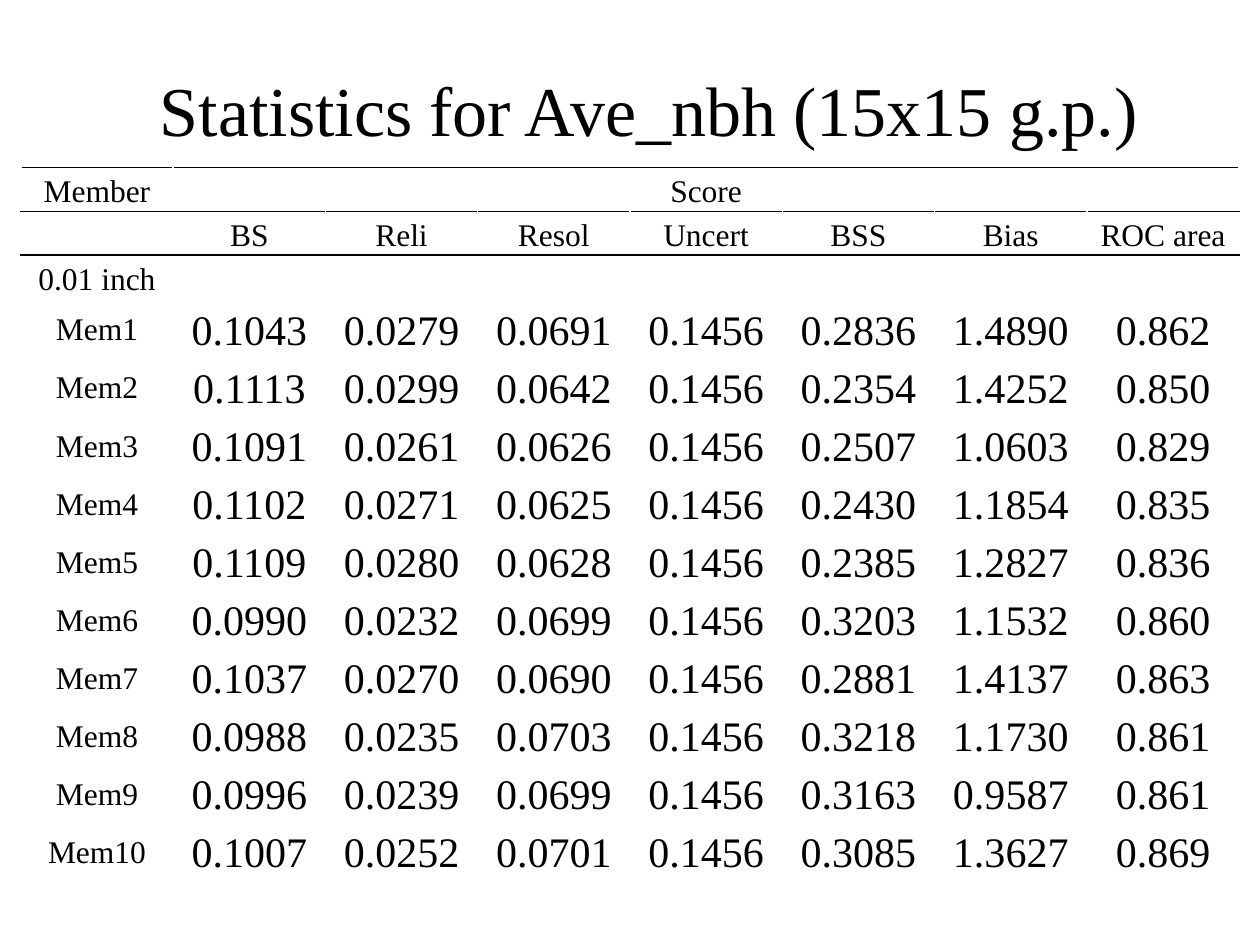
from dataclasses import dataclass

from lxml.etree import SubElement
from pptx import Presentation
from pptx.dml.color import RGBColor
from pptx.enum.text import MSO_ANCHOR, MSO_AUTO_SIZE, PP_ALIGN
from pptx.oxml.ns import qn
from pptx.util import Cm, Pt


@dataclass(frozen=True)
class Theme:
    font: str = "Times New Roman"
    ink: str = "000000"
    title_size: int = 40
    label_size: int = 18
    value_size: int = 24
    rule_width: int = 1


HEADINGS = ["", "BS", "Reli", "Resol", "Uncert", "BSS", "Bias", "ROC area"]
SCORES = """
0.1043 0.0279 0.0691 0.1456 0.2836 1.4890 0.862
0.1113 0.0299 0.0642 0.1456 0.2354 1.4252 0.850
0.1091 0.0261 0.0626 0.1456 0.2507 1.0603 0.829
0.1102 0.0271 0.0625 0.1456 0.2430 1.1854 0.835
0.1109 0.0280 0.0628 0.1456 0.2385 1.2827 0.836
0.0990 0.0232 0.0699 0.1456 0.3203 1.1532 0.860
0.1037 0.0270 0.0690 0.1456 0.2881 1.4137 0.863
0.0988 0.0235 0.0703 0.1456 0.3218 1.1730 0.861
0.0996 0.0239 0.0699 0.1456 0.3163 0.9587 0.861
0.1007 0.0252 0.0701 0.1456 0.3085 1.3627 0.869
"""
HEADER_ROWS = 3  # score band, score names, threshold


class StatisticsSlide:
    def __init__(self, presentation, theme):
        self.theme = theme
        self.slide = presentation.slides.add_slide(presentation.slide_layouts[5])

    def style(self, paragraph, size, align):
        paragraph.alignment = align
        for run in paragraph.runs:
            run.font.name = self.theme.font
            run.font.size = Pt(size)
            run.font.color.rgb = RGBColor.from_string(self.theme.ink)

    def title(self, text, left, top, width, height):
        heading = self.slide.shapes.title
        heading.left, heading.top = Cm(left), Cm(top)
        heading.width, heading.height = Cm(width), Cm(height)
        frame = heading.text_frame
        frame.text = text
        frame.word_wrap = True
        frame.auto_size = MSO_AUTO_SIZE.NONE
        frame.vertical_anchor = MSO_ANCHOR.TOP
        frame.margin_top = Cm(0.27)
        self.style(frame.paragraphs[0], self.theme.title_size, PP_ALIGN.LEFT)

    def rule(self, cell, edge):
        line = SubElement(cell._tc.get_or_add_tcPr(), qn(f"a:{edge}"),
                          w=str(Pt(self.theme.rule_width)))
        fill = SubElement(line, qn("a:solidFill"))
        SubElement(fill, qn("a:srgbClr"), val=self.theme.ink)

    def cell(self, cell, text, size, edges):
        cell.margin_left = cell.margin_right = Cm(0.18)
        cell.margin_top = cell.margin_bottom = 0
        cell.vertical_anchor = MSO_ANCHOR.MIDDLE
        for edge in edges:
            self.rule(cell, edge)
        cell.fill.background()
        if text:
            cell.text_frame.text = text
            paragraph = cell.text_frame.paragraphs[0]
            paragraph.line_spacing = 1.15
            self.style(paragraph, size, PP_ALIGN.CENTER)

    def table(self, rows, left, top, width, header_height, value_height):
        columns = len(rows[0])
        grid = self.slide.shapes.add_table(
            len(rows), columns, Cm(left), Cm(top), Cm(width),
            Cm(header_height * len(rows))).table
        grid.first_row = grid.horz_banding = False
        for r, row in enumerate(rows):
            is_header = r < HEADER_ROWS
            grid.rows[r].height = Cm(header_height if is_header else value_height)
            # Rules above and below the two heading rows
            edges = {0: ["lnT", "lnB"], 1: ["lnT", "lnB"], 2: ["lnT"]}.get(r, [])
            for c, text in enumerate(row):
                is_label = is_header or c == 0
                size = self.theme.label_size if is_label else self.theme.value_size
                self.cell(grid.cell(r, c), text, size, edges)
        grid.cell(0, 1).merge(grid.cell(0, columns - 1))


def main():
    presentation = Presentation()
    presentation.slide_width, presentation.slide_height = Cm(25.4), Cm(19.05)
    page = StatisticsSlide(presentation, Theme())

    # Title
    page.title("Statistics for Ave_nbh (15x15 g.p.)", 2.97, 1.07, 20.32, 2.74)

    # Scores of each ensemble member
    blanks = [""] * (len(HEADINGS) - 2)
    members = [[f"Mem{number}", *line.split()]
               for number, line in enumerate(SCORES.strip().splitlines(), 1)]
    rows = [["Member", "Score", *blanks], HEADINGS,
            ["0.01 inch", "", *blanks], *members]
    page.table(rows, 0.42, 3.38, 24.56, 0.88, 1.17)

    presentation.save("out.pptx")


if __name__ == "__main__":
    main()
